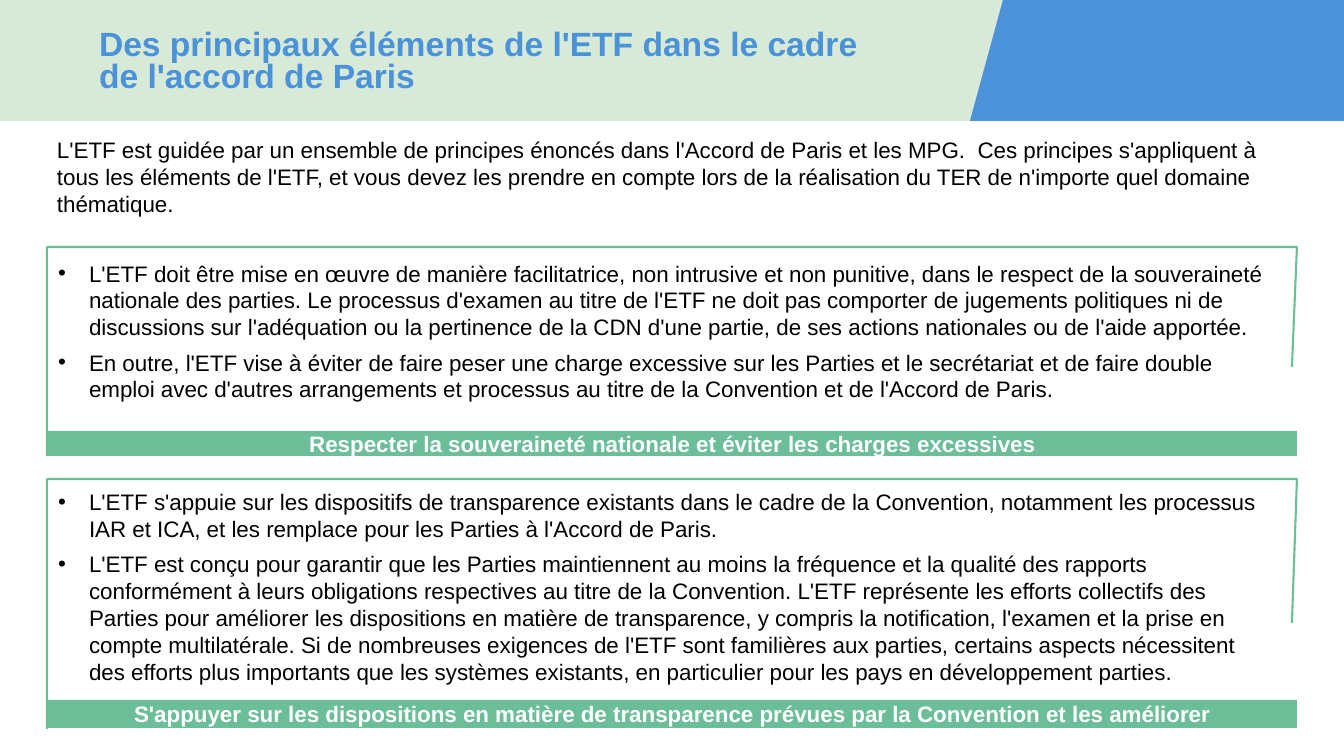
from dataclasses import dataclass

import pptx
import pptx.dml.color
import pptx.enum.shapes
import pptx.enum.text
import pptx.util

RGBColor = pptx.dml.color.RGBColor
PP_ALIGN = pptx.enum.text.PP_ALIGN
MSO_ANCHOR = pptx.enum.text.MSO_ANCHOR

SCALE = 914400 / 100.8
WIDTH, HEIGHT = 1344, 756
HEADER_HEIGHT = 121
FRAME_LEFT, FRAME_RIGHT, FRAME_NOTCH = 47, 1297, 1292
LIST_LEFT, LIST_WIDTH = 58, 1228
BULLET_INDENT = 31

PALE_GREEN = RGBColor(0xD7, 0xEA, 0xD7)
GREEN = RGBColor(0x6C, 0xBE, 0x99)
BLUE = RGBColor(0x4B, 0x92, 0xD8)
BLACK = RGBColor(0, 0, 0)
WHITE = RGBColor(0xFF, 0xFF, 0xFF)


@dataclass(frozen=True)
class TextFormat:
    size: int
    color: RGBColor
    bold: bool = False
    align: PP_ALIGN = PP_ALIGN.LEFT
    anchor: MSO_ANCHOR = MSO_ANCHOR.MIDDLE
    spacing: float = 1.0
    insets: tuple[int, int, int, int] = (0, 0, 0, 0)


@dataclass(frozen=True)
class Panel:
    top: int
    bottom: int
    notch_bottom: int
    list_top: int
    list_height: int
    bar_top: int
    bar_height: int
    caption: str
    points: tuple[str, ...]


TITLE = TextFormat(24, BLUE, bold=True, spacing=0.8)
INTRO = TextFormat(16, BLACK, anchor=MSO_ANCHOR.TOP, insets=(10, 5, 10, 5))
LIST = TextFormat(16, BLACK, insets=(0, 0, 10, 5))
CAPTION = TextFormat(16, WHITE, bold=True, align=PP_ALIGN.CENTER, insets=(10, 5, 10, 5))

TITLE_TEXT = "Des principaux éléments de l'ETF dans le cadre de l'accord de Paris"
INTRO_TEXT = (
    "L'ETF est guidée par un ensemble de principes énoncés dans l'Accord de Paris et les MPG.  "
    "Ces principes s'appliquent à tous les éléments de l'ETF, et vous devez les prendre en compte "
    "lors de la réalisation du TER de n'importe quel domaine thématique."
)
PANELS = (
    Panel(
        247, 456, 367, 259, 149, 431, 25,
        "Respecter la souveraineté nationale et éviter les charges excessives",
        (
            "L'ETF doit être mise en œuvre de manière facilitatrice, non intrusive et non punitive, "
            "dans le respect de la souveraineté nationale des parties. Le processus d'examen au titre "
            "de l'ETF ne doit pas comporter de jugements politiques ni de discussions sur l'adéquation "
            "ou la pertinence de la CDN d'une partie, de ses actions nationales ou de l'aide apportée.",
            "En outre, l'ETF vise à éviter de faire peser une charge excessive sur les Parties et le "
            "secrétariat et de faire double emploi avec d'autres arrangements et processus au titre de "
            "la Convention et de l'Accord de Paris.",
        ),
    ),
    Panel(
        479, 729, 623, 487, 204, 700, 28,
        "S'appuyer sur les dispositions en matière de transparence prévues par la Convention "
        "et les améliorer",
        (
            "L'ETF s'appuie sur les dispositifs de transparence existants dans le cadre de la "
            "Convention, notamment les processus IAR et ICA, et les remplace pour les Parties à "
            "l'Accord de Paris.",
            "L'ETF est conçu pour garantir que les Parties maintiennent au moins la fréquence et la "
            "qualité des rapports conformément à leurs obligations respectives au titre de la "
            "Convention. L'ETF représente les efforts collectifs des Parties pour améliorer les "
            "dispositions en matière de transparence, y compris la notification, l'examen et la prise "
            "en compte multilatérale. Si de nombreuses exigences de l'ETF sont familières aux parties, "
            "certains aspects nécessitent des efforts plus importants que les systèmes existants, en "
            "particulier pour les pays en développement parties.",
        ),
    ),
)


def px(n: int) -> int:
    return round(n * SCALE)


def place(sp, left: int, top: int, width: int, height: int) -> None:
    frame = {"left": left, "top": top, "width": width, "height": height}
    for name, value in frame.items():
        setattr(sp, name, px(value))


def write(sp, texts: tuple[str, ...], fmt: TextFormat) -> None:
    tf = sp.text_frame
    sides = ("margin_left", "margin_top", "margin_right", "margin_bottom")
    frame = {side: px(inset) for side, inset in zip(sides, fmt.insets)}
    frame |= {
        "word_wrap": True,
        "auto_size": pptx.enum.text.MSO_AUTO_SIZE.NONE,
        "vertical_anchor": fmt.anchor,
    }
    for name, value in frame.items():
        setattr(tf, name, value)
    for i, text in enumerate(texts):
        p = tf.paragraphs[0] if i == 0 else tf.add_paragraph()
        layout = {
            "alignment": fmt.align,
            "line_spacing": fmt.spacing,
            "space_before": pptx.util.Pt(6 if i else 0),
            "space_after": pptx.util.Pt(0),
        }
        for name, value in layout.items():
            setattr(p, name, value)
        r = p.add_run()
        r.text = text
        font = {"name": "Arial", "size": pptx.util.Pt(fmt.size), "bold": fmt.bold}
        for name, value in font.items():
            setattr(r.font, name, value)
        r.font.color.rgb = fmt.color


def paint(sp, color: RGBColor) -> None:
    sp.shadow.inherit = False
    sp.fill.solid()
    sp.fill.fore_color.rgb = color
    sp.line.fill.background()


def add_bar(s, left: int, top: int, width: int, height: int, color: RGBColor):
    rectangle = pptx.enum.shapes.MSO_SHAPE.RECTANGLE
    sp = s.shapes.add_shape(rectangle, px(left), px(top), px(width), px(height))
    paint(sp, color)
    return sp


def add_outline(s, points: list[tuple[int, int]], close: bool):
    builder = s.shapes.build_freeform(*points[0], scale=SCALE)
    builder.add_line_segments(points[1:], close=close)
    return builder.convert_to_shape()


def add_header(s) -> None:
    band = add_bar(s, 0, 0, WIDTH, HEADER_HEIGHT, PALE_GREEN)
    corner = add_outline(
        s, [(970, HEADER_HEIGHT), (1003, 0), (WIDTH, 0), (WIDTH, HEADER_HEIGHT)], True
    )
    paint(corner, BLUE)
    tree = s.shapes.title._element.getparent()
    for i, sp in enumerate((band, corner), start=2):
        tree.insert(i, sp._element)


def add_panel(s, body, panel: Panel) -> None:
    place(body, LIST_LEFT, panel.list_top, LIST_WIDTH, panel.list_height)
    write(body, panel.points, LIST)
    for p in body.text_frame.paragraphs:
        properties = p._p.get_or_add_pPr()
        properties.set("marL", str(px(BULLET_INDENT)))
        properties.set("indent", str(-px(BULLET_INDENT)))
    frame = add_outline(
        s,
        [
            (FRAME_LEFT, panel.bottom),
            (FRAME_LEFT, panel.top),
            (FRAME_RIGHT, panel.top),
            (FRAME_NOTCH, panel.notch_bottom),
        ],
        False,
    )
    frame.shadow.inherit = False
    frame.fill.background()
    frame.line.color.rgb = GREEN
    frame.line.width = pptx.util.Pt(1.5)
    bar = add_bar(s, FRAME_LEFT + 1, panel.bar_top, 1249, panel.bar_height, GREEN)
    write(bar, (panel.caption,), CAPTION)


def main() -> None:
    prs = pptx.Presentation()
    prs.slide_width, prs.slide_height = px(WIDTH), px(HEIGHT)
    s = prs.slides.add_slide(prs.slide_layouts[3])
    title, *bodies = s.placeholders
    place(title, 99, 27, 791, 72)
    write(title, (TITLE_TEXT,), TITLE)
    add_header(s)
    intro = s.shapes.add_textbox(px(FRAME_LEFT), px(131), px(1250), px(92))
    write(intro, (INTRO_TEXT,), INTRO)
    for body, panel in zip(bodies, PANELS):
        add_panel(s, body, panel)
    prs.save("out.pptx")


if __name__ == "__main__":
    main()
